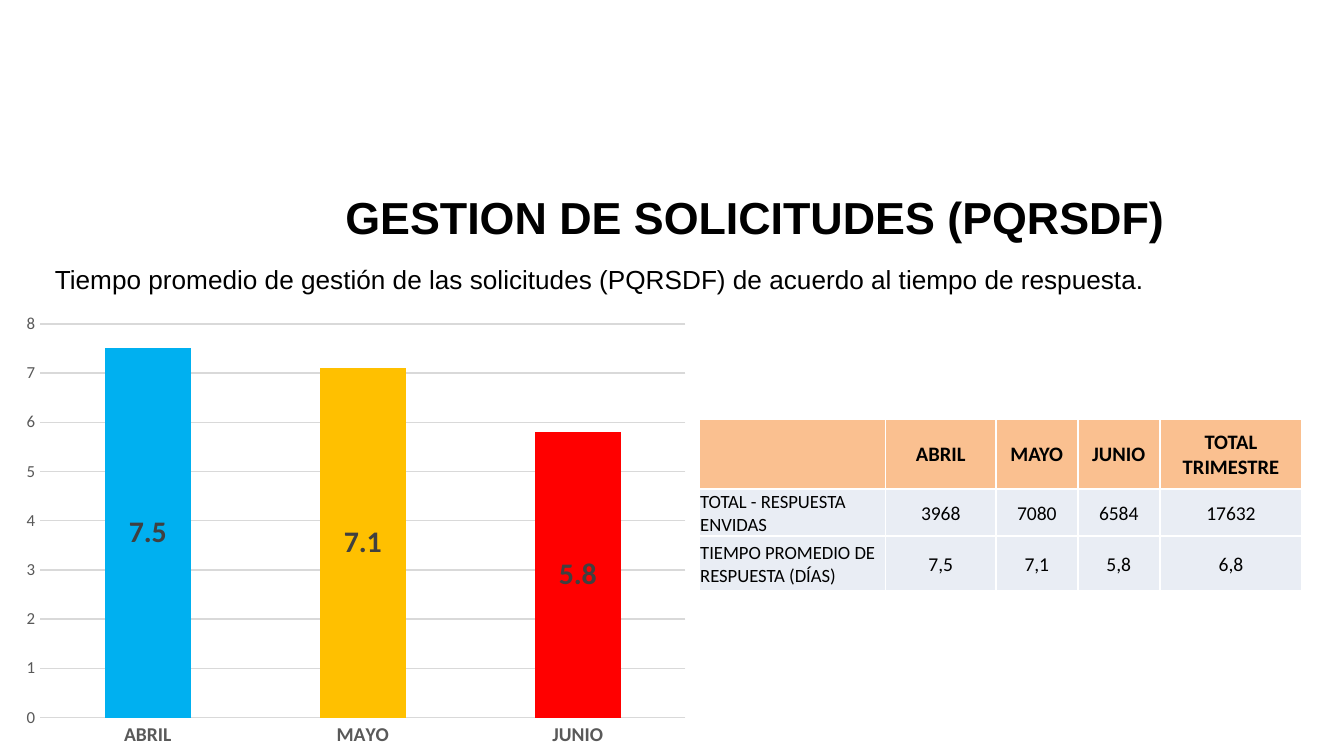
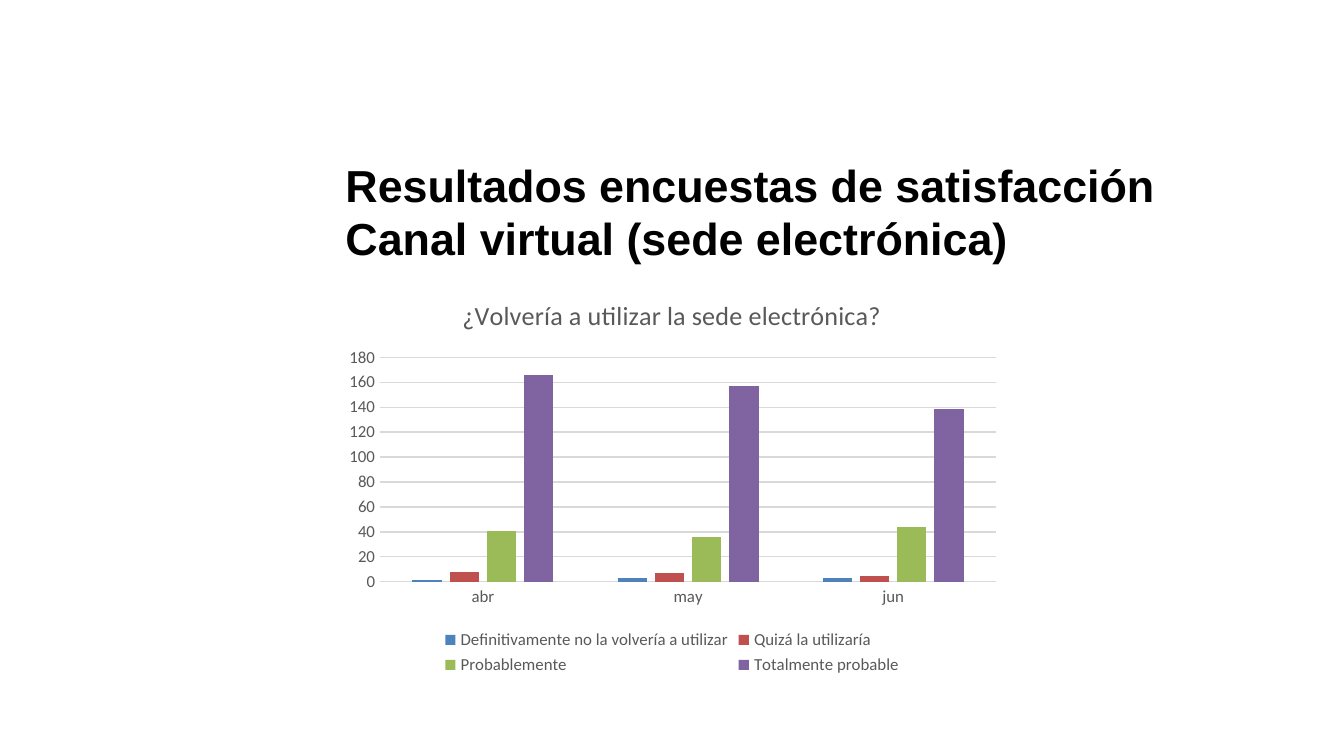
import pptx
import pptx.chart.data
import pptx.dml.color
import pptx.enum.chart
import pptx.enum.text
import pptx.oxml
import pptx.oxml.ns
import pptx.util

Inches = pptx.util.Inches
Pt = pptx.util.Pt
RGBColor = pptx.dml.color.RGBColor
qn = pptx.oxml.ns.qn
ChartType = pptx.enum.chart.XL_CHART_TYPE
Align = pptx.enum.text.PP_ALIGN
Anchor = pptx.enum.text.MSO_ANCHOR

BLACK = RGBColor(0x00, 0x00, 0x00)
GRAY = RGBColor(0x59, 0x59, 0x59)
DARK_GRAY = RGBColor(0x40, 0x40, 0x40)
GRID_GRAY = RGBColor(0xD9, 0xD9, 0xD9)
HEADER_FILL = RGBColor(0xFA, 0xC0, 0x90)
BODY_FILL = RGBColor(0xE9, 0xED, 0xF4)
BLUE = RGBColor(0x4F, 0x81, 0xBD)
RED = RGBColor(0xC0, 0x50, 0x4D)
GREEN = RGBColor(0x9B, 0xBB, 0x59)
PURPLE = RGBColor(0x80, 0x64, 0xA2)
MONTH_COLORS = [RGBColor(0x00, 0xB0, 0xF0), RGBColor(0xFF, 0xC0, 0x00),
                RGBColor(0xFF, 0x00, 0x00)]
HEADING_FONT = "Arial"
DATA_FONT = "Calibri"


def style_font(font, name, size, color=BLACK, bold=False):
    font.name = name
    font.size = Pt(size)
    font.bold = bold
    font.color.rgb = color


def add_page(deck, title, top):
    page = deck.slides.add_slide(deck.slide_layouts[5])
    box = page.shapes.title
    box.left, box.top = Inches(2.47), Inches(top)
    box.width, box.height = Inches(7.36), Inches(0.94)
    frame = box.text_frame
    frame.text = title
    frame.word_wrap = True
    frame.vertical_anchor = Anchor.MIDDLE
    para = frame.paragraphs[0]
    para.alignment = Align.LEFT
    for span in para.runs:
        style_font(span.font, HEADING_FONT, 24, bold=True)
    return page


def add_subtitle(page, text):
    box = page.shapes.add_textbox(Inches(0.31), Inches(1.91), Inches(8.34), Inches(0.34))
    frame = box.text_frame
    frame.text = text
    frame.word_wrap = False
    frame.auto_size = pptx.enum.text.MSO_AUTO_SIZE.SHAPE_TO_FIT_TEXT
    style_font(frame.paragraphs[0].runs[0].font, HEADING_FONT, 14)


def add_cell_borders(cell):
    properties = cell._tc.get_or_add_tcPr()
    for side in ("lnL", "lnR", "lnT", "lnB"):
        properties.append(pptx.oxml.parse_xml(
            f'<a:{side} {pptx.oxml.ns.nsdecls("a")} w="12700"><a:solidFill>'
            f'<a:srgbClr val="FFFFFF"/></a:solidFill></a:{side}>'))


def fill_cell(cell, text, size, fill, align, bold):
    add_cell_borders(cell)
    cell.fill.solid()
    cell.fill.fore_color.rgb = fill
    cell.margin_left = cell.margin_right = cell.margin_top = Inches(0.01)
    cell.margin_bottom = 0
    cell.vertical_anchor = Anchor.MIDDLE
    cell.text = text
    para = cell.text_frame.paragraphs[0]
    para.alignment = align
    style_font(para.font, DATA_FONT, size)
    for span in para.runs:
        style_font(span.font, DATA_FONT, size, bold=bold)


def add_response_table(page, rows):
    widths = [1.39, 0.82, 0.61, 0.61, 1.06]
    heights = [0.52, 0.35, 0.41]
    table = page.shapes.add_table(
        len(heights), len(widths), Inches(5.2), Inches(3.12),
        Inches(sum(widths)), Inches(sum(heights))).table
    table.horz_banding = False
    for column, width in zip(table.columns, widths):
        column.width = Inches(width)
    for row_index, (values, height) in enumerate(zip(rows, heights)):
        table.rows[row_index].height = Inches(height)
        header = row_index == 0
        for column_index, text in enumerate(values):
            label = column_index == 0
            fill_cell(table.cell(row_index, column_index), text,
                      size=11 if header else 10 if label else 10.5,
                      fill=HEADER_FILL if header else BODY_FILL,
                      align=Align.LEFT if label else Align.CENTER, bold=header)


def set_plot_area(chart, size, place):
    """Place the inner plot area; size and place are in inches."""
    area = chart._chartSpace.find(".//" + qn("c:plotArea"))
    for layout in area.findall(qn("c:layout")):
        area.remove(layout)
    places = "".join(f'<c:{key} val="{length / whole:.4f}"/>'
                     for key, length, whole in zip("xywh", place, size * 2))
    area.insert(0, pptx.oxml.parse_xml(
        f'<c:layout {pptx.oxml.ns.nsdecls("c")}><c:manualLayout>'
        '<c:layoutTarget val="inner"/><c:xMode val="edge"/><c:yMode val="edge"/>'
        f'{places}</c:manualLayout></c:layout>'))


def style_axes(chart, maximum, step):
    tick = pptx.enum.chart.XL_TICK_MARK.NONE
    for axis in (chart.category_axis, chart.value_axis):
        axis.major_tick_mark = axis.minor_tick_mark = tick
        axis.format.line.fill.background()
        style_font(axis.tick_labels.font, DATA_FONT, 9, GRAY)
    axis = chart.value_axis
    axis.minimum_scale, axis.maximum_scale, axis.major_unit = 0, maximum, step
    axis.has_major_gridlines = True
    line = axis.major_gridlines.format.line
    line.color.rgb = GRID_GRAY
    line.width = Pt(0.75)


def add_column_chart(page, kind, place, plot_place, months, series,
                     gap, overlap, maximum, step):
    """Add a column chart; series holds (name, values, color) entries."""
    data = pptx.chart.data.CategoryChartData()
    data.categories = months
    for name, values, _ in series:
        data.add_series(name, values)
    chart = page.shapes.add_chart(kind, *map(Inches, place), data).chart
    style_font(chart.font, DATA_FONT, 10)
    chart.has_title = chart.has_legend = False
    plot = chart.plots[0]
    plot.vary_by_categories = False
    plot.gap_width, plot.overlap = gap, overlap
    for columns, (_, _, color) in zip(plot.series, series):
        columns.format.fill.solid()
        columns.format.fill.fore_color.rgb = color
        columns.invert_if_negative = False
    style_axes(chart, maximum, step)
    set_plot_area(chart, place[2:], plot_place)
    return chart


def add_time_chart(page):
    chart = add_column_chart(
        page, ChartType.COLUMN_STACKED, (0.09, 2.27, 5.11, 3.36),
        (0.21, 0.14, 4.8, 2.93),
        ["ABRIL", "MAYO", "JUNIO"], [("Series 1", (7.5, 7.1, 5.8), BLUE)],
        gap=150, overlap=100, maximum=8, step=1)
    style_font(chart.category_axis.tick_labels.font, DATA_FONT, 10.5, GRAY, bold=True)
    columns = chart.plots[0].series[0]
    for index, color in enumerate(MONTH_COLORS):
        fill = columns.points[index].format.fill
        fill.solid()
        fill.fore_color.rgb = color
    labels = columns.data_labels
    labels.show_value = True
    labels.position = pptx.enum.chart.XL_LABEL_POSITION.CENTER
    style_font(labels.font, DATA_FONT, 16, DARK_GRAY, bold=True)


def add_survey_chart(page):
    chart = add_column_chart(
        page, ChartType.COLUMN_CLUSTERED, (2.5, 2.06, 5, 3),
        (0.33, 0.6, 4.58, 1.67), ["abr", "may", "jun"],
        [("Definitivamente no la volvería a utilizar", (1, 3, 3), BLUE),
         ("Quizá la utilizaría", (8, 7, 5), RED),
         ("Probablemente", (41, 36, 44), GREEN),
         ("Totalmente probable", (166, 157, 139), PURPLE)],
        gap=219, overlap=-27, maximum=180, step=20)
    line = chart.category_axis.format.line
    line.color.rgb = GRID_GRAY
    line.width = Pt(0.75)
    chart.has_title = True
    frame = chart.chart_title.text_frame
    frame.text = "¿Volvería a utilizar la sede electrónica?"
    style_font(frame.paragraphs[0].runs[0].font, DATA_FONT, 14, GRAY)
    chart.chart_title.include_in_layout = False
    chart.has_legend = True
    chart.legend.position = pptx.enum.chart.XL_LEGEND_POSITION.BOTTOM
    chart.legend.include_in_layout = False
    style_font(chart.legend.font, DATA_FONT, 9, GRAY)


def main():
    deck = pptx.Presentation()
    deck.slide_width = Inches(10)
    deck.slide_height = deck.slide_width * 9 // 16

    page = add_page(deck, "GESTION DE SOLICITUDES (PQRSDF)", 1.14)
    add_subtitle(page, "Tiempo promedio de gestión de las solicitudes (PQRSDF) "
                       "de acuerdo al tiempo de respuesta.")
    add_time_chart(page)
    add_response_table(page, [
        ["", "ABRIL", "MAYO", "JUNIO", "TOTAL TRIMESTRE"],
        ["TOTAL - RESPUESTA ENVIDAS", "3968", "7080", "6584", "17632"],
        ["TIEMPO PROMEDIO DE RESPUESTA (DÍAS)", "7,5", "7,1", "5,8", "6,8"],
    ])

    page = add_page(deck, "Resultados encuestas de satisfacción \v"
                          "Canal virtual (sede electrónica)", 1.1)
    add_survey_chart(page)
    deck.save("out.pptx")


if __name__ == "__main__":
    main()
